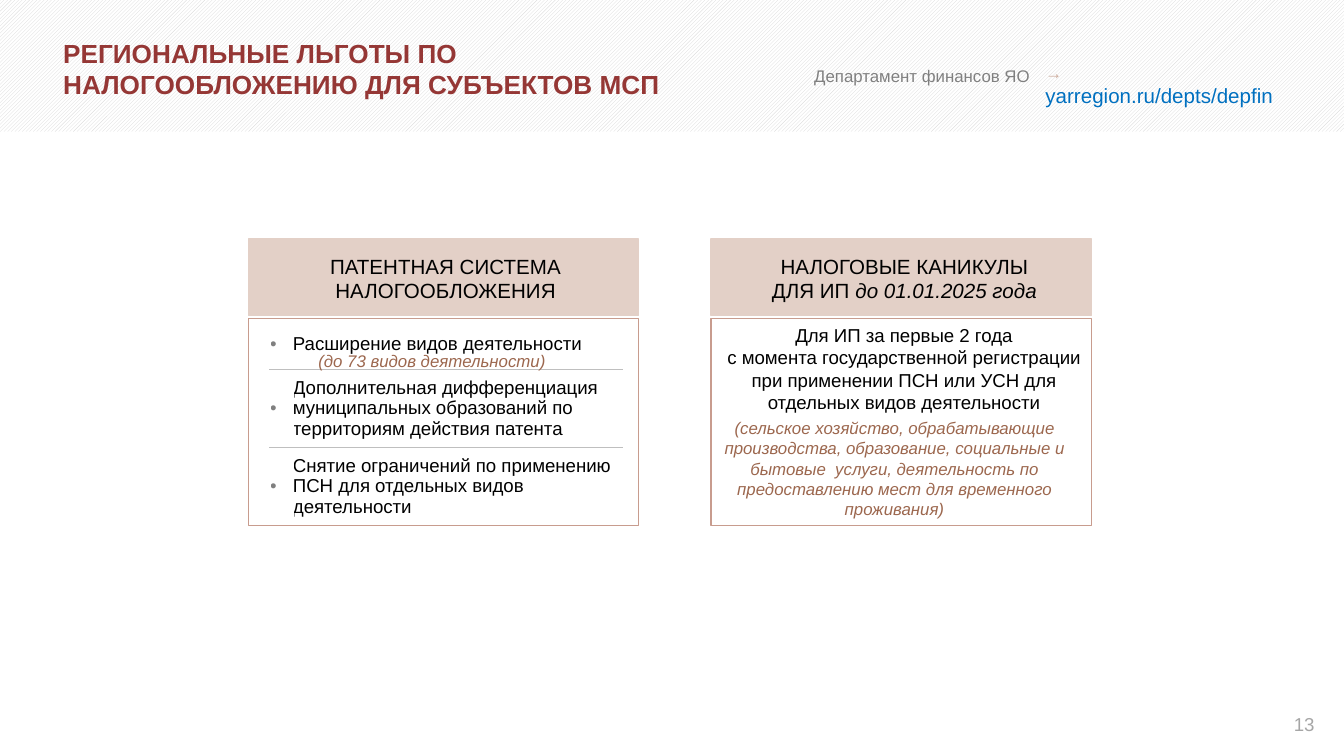
from dataclasses import dataclass

from lxml import etree
from pptx import Presentation
from pptx import util as u
from pptx.dml.color import RGBColor
from pptx.enum import dml, shapes, text
from pptx.oxml.ns import qn

FONT = "Arial"
BLACK, GREY, PALE, RUST = "000000", "808080", "A6A6A6", "9C674E"
TIGHT = (0.07, 0.03)
WIDE = (0.1, 0.05)
LEFT, MID, RIGHT = text.PP_ALIGN.LEFT, text.PP_ALIGN.CENTER, text.PP_ALIGN.RIGHT
TOP, CORE = text.MSO_ANCHOR.TOP, text.MSO_ANCHOR.MIDDLE


@dataclass
class Run:
    words: str
    size: float
    color: str = BLACK
    bold: bool = False
    slant: bool = False


@dataclass
class Note:
    box: tuple[float, float, float, float]
    lines: list[list[Run]]
    align: int = MID
    anchor: int = TOP
    inset: tuple[float, float] = TIGHT
    wrap: bool = True


@dataclass
class Card:
    left: float
    width: float


@dataclass
class Item:
    lines: list[str]
    height: float = 0.58
    pitch: float = 1


CARDS = [Card(1.85, 2.9), Card(5.29, 2.83)]
ITEMS = [
    Item(["Расширение видов деятельности"], 0.37, 0.9),
    Item(["Дополнительная дифференциация муниципальных образований "
          "по территориям действия патента"]),
    Item(["Снятие ограничений по применению",
          "ПСН для отдельных видов деятельности"]),
]
TITLE = Note((0.4, 0.24, 4.59, 0.54), [[Run(
    "РЕГИОНАЛЬНЫЕ ЛЬГОТЫ ПО НАЛОГООБЛОЖЕНИЮ ДЛЯ СУБЪЕКТОВ МСП",
    14, "953735", bold=True)]], LEFT, CORE)
NOTES = [
    Note((9.25, 5.24, 0.63, 0.3), [[Run("13", 10, PALE)]], RIGHT, CORE, WIDE),
    Note((5.27, 2.36, 2.91, 0.77), [
        [Run("Для ИП за первые 2 года", 10)],
        [Run("с момента государственной регистрации при применении ПСН "
             "или УСН для отдельных видов деятельности", 10)]], inset=WIDE),
    Note((1.92, 1.85, 2.79, 0.44), [
        [Run("ПАТЕНТНАЯ СИСТЕМА", 11)],
        [Run("НАЛОГООБЛОЖЕНИЯ", 11)]], anchor=CORE),
    Note((5.59, 1.85, 2.28, 0.44), [
        [Run("НАЛОГОВЫЕ КАНИКУЛЫ", 11)],
        [Run("ДЛЯ ИП ", 11), Run("до 01.01.2025 года", 11, slant=True)]],
        anchor=CORE),
    Note((2.27, 2.56, 1.91, 0.25), [
        [Run("(до 73 видов деятельности)", 9, RUST, slant=True)]],
        LEFT, inset=WIDE, wrap=False),
    Note((5.24, 3.08, 2.83, 0.83), [[Run(
        "(сельское хозяйство, обрабатывающие производства, образование, "
        "социальные и бытовые  услуги, деятельность по предоставлению мест "
        "для временного проживания)", 9, RUST, slant=True)]]),
    Note((5.96, 0.44, 1.88, 0.25), [[Run("Департамент финансов ЯО", 9, GREY)]],
         LEFT, CORE, WIDE),
    Note((7.68, 0.42, 2.05, 0.29), [
        [Run("→ ", 9, "CEAD9E"), Run("yarregion.ru/depts/depfin", 11, "0070C0")]],
        LEFT, inset=WIDE),
]


def paint(target, color: str) -> None:
    target.rgb = RGBColor.from_string(color)


def write(frame, lines: list[list[Run]], align: int, pitch: float = 1) -> None:
    for i, line in enumerate(lines):
        para = frame.paragraphs[0] if i == 0 else frame.add_paragraph()
        para.alignment = align
        para.line_spacing = pitch
        for part in line:
            run = para.add_run()
            run.text = part.words
            font = run.font
            font.name, font.size = FONT, u.Pt(part.size)
            font.bold, font.italic = part.bold, part.slant
            paint(font.color, part.color)


def fit(shape, note: Note) -> None:
    """Place a text shape and fill it with its lines."""
    shape.left, shape.top, shape.width, shape.height = map(u.Inches, note.box)
    frame = shape.text_frame
    frame.word_wrap = note.wrap
    frame.auto_size = text.MSO_AUTO_SIZE.NONE
    frame.vertical_anchor = note.anchor
    frame.margin_left = frame.margin_right = u.Inches(note.inset[0])
    frame.margin_top = frame.margin_bottom = u.Inches(note.inset[1])
    write(frame, note.lines, note.align)


def block(slide, box: tuple[float, float, float, float]):
    shape = slide.shapes.add_shape(shapes.MSO_SHAPE.RECTANGLE, *map(u.Inches, box))
    shape.shadow.inherit = False
    return shape


def band(slide) -> None:
    """Draw the hatched header strip."""
    shape = block(slide, (0, -0.02, 10, 1))
    shape.fill.patterned()
    shape.fill.pattern = dml.MSO_PATTERN.DARK_UPWARD_DIAGONAL
    paint(shape.fill.fore_color, "D8D8D8")
    paint(shape.fill.back_color, "FFFFFF")
    shape.line.fill.background()
    slide.shapes._spTree.insert(2, shape._element)


def frame_card(slide, card: Card) -> None:
    head = block(slide, (card.left, 1.78, card.width, 0.57))
    head.fill.solid()
    paint(head.fill.fore_color, "E3D0C7")
    body = block(slide, (card.left, 2.37, card.width, 1.54))
    body.fill.background()
    for shape, color in ((head, "E3D0C7"), (body, "C89C8E")):
        paint(shape.line.color, color)
        shape.line.width = u.Pt(0.75)


def edge(cell, side: str, color: str | None, width: float = 1) -> None:
    """Set one border of a cell; no colour means no line."""
    props = cell._tc.get_or_add_tcPr()
    line = etree.SubElement(props, qn(f"a:{side}"), w=str(u.Pt(width)))
    if color is None:
        etree.SubElement(line, qn("a:noFill"))
        return
    fill = etree.SubElement(line, qn("a:solidFill"))
    etree.SubElement(fill, qn("a:srgbClr"), val=color)


def items(slide) -> None:
    """Draw the ruled table of bulleted measures."""
    box = map(u.Inches, (2.01, 2.38, 2.62, 1.53))
    table = slide.shapes.add_table(len(ITEMS), 2, *box).table
    table.first_row = table.horz_banding = False
    for col, width in zip(table.columns, (0.17, 2.45)):
        col.width = u.Inches(width)
    last = len(ITEMS) - 1
    for i, (row, item) in enumerate(zip(table.rows, ITEMS)):
        row.height = u.Inches(item.height)
        parts = (([[Run("•", 10, GREY)]], 0.9),
                 ([[Run(line, 10)] for line in item.lines], item.pitch))
        for cell, (words, pitch) in zip(row.cells, parts):
            cell.margin_left = cell.margin_right = 0
            cell.margin_top = cell.margin_bottom = u.Inches(0.04)
            cell.vertical_anchor = CORE
            edge(cell, "lnL", "FFFFFF")
            edge(cell, "lnR", "FFFFFF")
            edge(cell, "lnT", "BFBFBF" if i else None, 0.5)
            edge(cell, "lnB", "BFBFBF" if i < last else None, 0.5)
            cell.fill.background()
            write(cell.text_frame, words, LEFT, pitch)


def main() -> None:
    deck = Presentation()
    deck.slide_width, deck.slide_height = u.Inches(10), u.Inches(10 * 9 / 16)
    slide = deck.slides.add_slide(deck.slide_layouts[5])
    band(slide)
    fit(slide.shapes.title, TITLE)
    for card in CARDS:
        frame_card(slide, card)
    items(slide)
    for note in NOTES:
        fit(slide.shapes.add_textbox(0, 0, 0, 0), note)
    deck.save("out.pptx")


if __name__ == "__main__":
    main()
